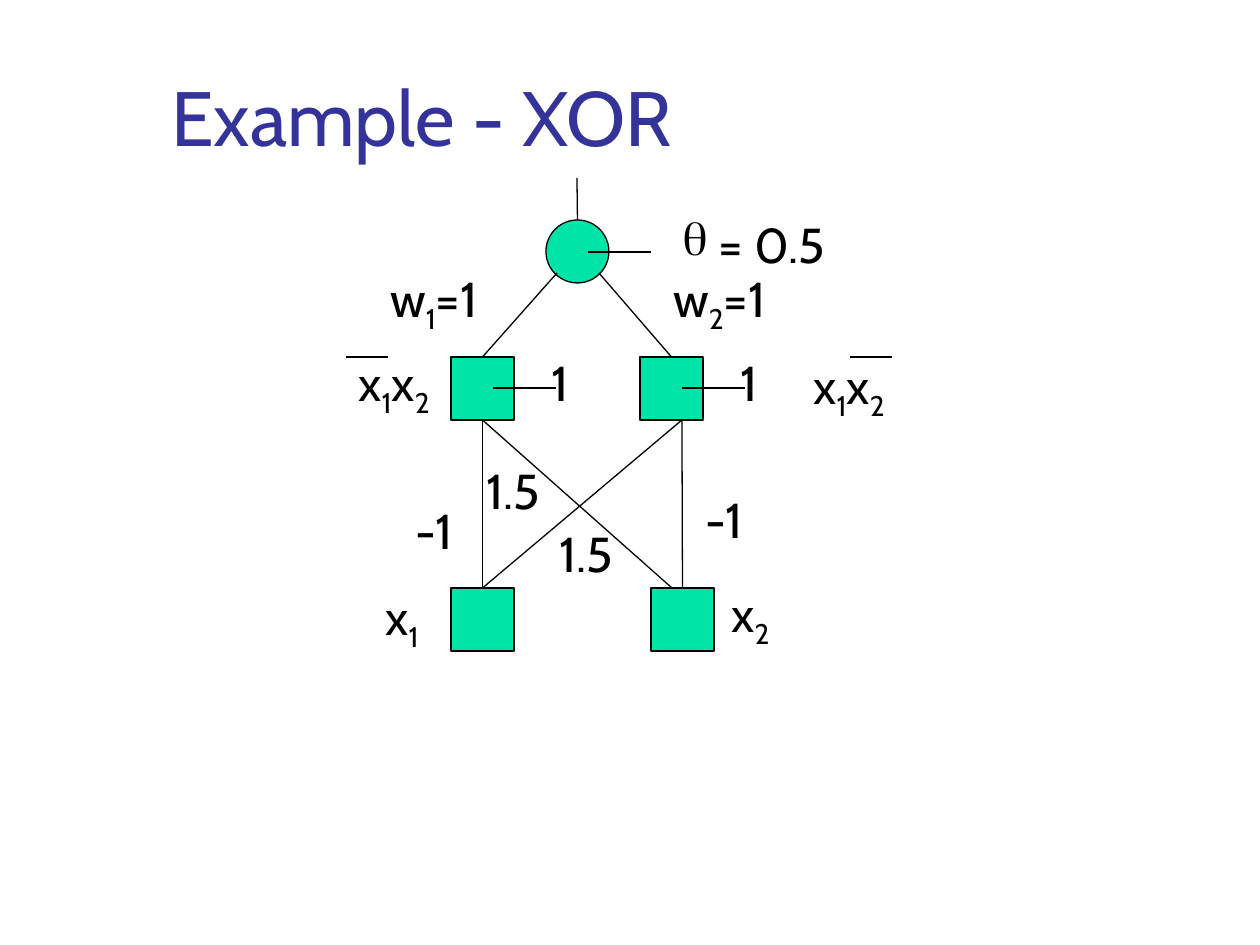
import pptx
import pptx.dml.color
import pptx.enum.shapes
import pptx.enum.text
import pptx.oxml.ns
import pptx.oxml.xmlchemy
import pptx.util

EMU_PER_PX = 914400 // 126
FONT = "Cabin"
COLORS = {"title": "333399", "ink": "000000", "node": "00E4A8"}
NODE_SIZE = 63
LABEL_HEIGHT = 72
TOP, BOTTOM = 0, 2

# left, top, width, text; the odd pieces between bars are subscripts
LABELS = [
    (661, 262, 135, "w|2|=1"),
    (378, 262, 135, "w|1|=1"),
    (346, 346, 112, "x|1|x|2"),
    (801, 349, 112, "x|1|x|2"),
    (539, 346, 69, "1"),
    (728, 346, 69, "1"),
    (474, 454, 93, "1.5"),
    (547, 517, 93, "1.5"),
    (403, 494, 69, "-1"),
    (693, 483, 69, "-1"),
    (373, 580, 68, "x|1"),
    (719, 577, 68, "x|2"),
]


def px(value):
    return pptx.util.Emu(value * EMU_PER_PX)


def rgb(name):
    return pptx.dml.color.RGBColor.from_string(COLORS[name])


def add_text(slide, left, top, width, height, text, size=28, color="ink"):
    """Add a text box whose bar-separated pieces alternate normal and subscript."""
    box = slide.shapes.add_textbox(px(left), px(top), px(width), px(height))
    box.text_frame.word_wrap = True
    paragraph = box.text_frame.paragraphs[0]
    for index, piece in enumerate(text.split("|")):
        run = paragraph.add_run()
        run.text = piece
        run.font.name = FONT
        run.font.size = pptx.util.Pt(size)
        run.font.color.rgb = rgb(color)
        if index % 2:
            run.font._element.set("baseline", "-25000")
    return box


def add_bullet(paragraph, character):
    properties = paragraph._p.get_or_add_pPr()
    bullet = properties.makeelement(pptx.oxml.ns.qn("a:buChar"), {"char": character})
    properties.append(bullet)


def add_node(slide, left, top, kind="RECTANGLE"):
    preset = getattr(pptx.enum.shapes.MSO_SHAPE, kind)
    node = slide.shapes.add_shape(preset, px(left), px(top), px(NODE_SIZE), px(NODE_SIZE))
    node.shadow.inherit = False
    node.fill.solid()
    node.fill.fore_color.rgb = rgb("node")
    node.line.color.rgb = rgb("ink")
    node.line.width = pptx.util.Pt(0.75)
    return node


def add_line(slide, start, end, begin=None, finish=None):
    """Draw a line; begin and finish are optional (shape, side) joins."""
    line = slide.shapes.add_connector(
        pptx.enum.shapes.MSO_CONNECTOR.STRAIGHT, *map(px, start + end))
    line.line.color.rgb = rgb("ink")
    line.line.width = pptx.util.Pt(0.75)
    properties = line._element.spPr
    properties.append(properties.makeelement(pptx.oxml.ns.qn("a:effectLst"), {}))
    if begin:
        line.begin_connect(*begin)
    if finish:
        line.end_connect(*finish)


def add_network(slide):
    output = add_node(slide, 546, 220, "OVAL")
    hidden_left = add_node(slide, 451, 357)
    hidden_right = add_node(slide, 640, 357)
    input_left = add_node(slide, 451, 588)
    input_right = add_node(slide, 651, 588)

    add_line(slide, (577, 178), (577, 220), finish=(output, TOP))
    add_line(slide, (483, 357), (557, 273), begin=(hidden_left, TOP))
    add_line(slide, (599, 273), (672, 357), finish=(hidden_right, TOP))
    add_line(slide, (483, 588), (682, 420), begin=(input_left, TOP))
    add_line(slide, (483, 420), (672, 588), begin=(hidden_left, BOTTOM))
    add_line(slide, (483, 420), (483, 588),
             begin=(hidden_left, BOTTOM), finish=(input_left, TOP))
    add_line(slide, (682, 420), (682, 588), finish=(input_right, TOP))

    for left, top in ((588, 252), (493, 388), (682, 388)):
        add_line(slide, (left, top), (left + NODE_SIZE, top))
    for left in (346, 850):
        add_line(slide, (left, 357), (left + 42, 357))


def main():
    presentation = pptx.Presentation()
    presentation.slide_width = pptx.util.Inches(10)
    presentation.slide_height = pptx.util.Inches(7.5)
    slide = presentation.slides.add_slide(presentation.slide_layouts[6])

    title = add_text(slide, 159, 29, 1073, 139, "Example - XOR", 44, "title")
    title.text_frame.vertical_anchor = pptx.enum.text.MSO_ANCHOR.BOTTOM

    add_network(slide)
    for left, top, width, text in LABELS:
        add_text(slide, left, top, width, LABEL_HEIGHT, text)
    threshold = add_text(slide, 670, 208, 176, LABEL_HEIGHT, " = 0.5")
    add_bullet(threshold.text_frame.paragraphs[0], "θ")

    presentation.save("out.pptx")


if __name__ == "__main__":
    main()
